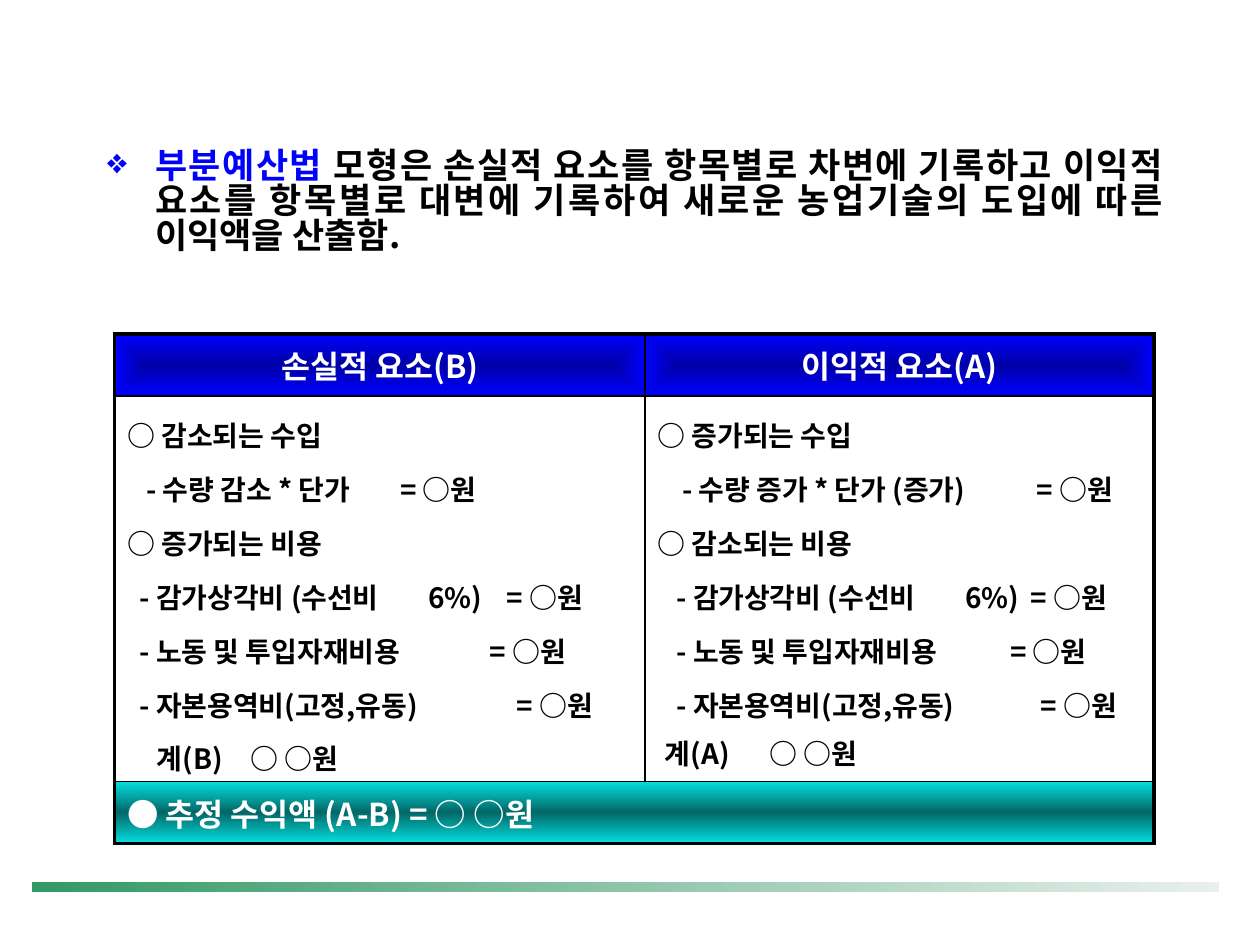
from lxml import etree
from pptx import Presentation
from pptx.dml.color import RGBColor
from pptx.enum.shapes import MSO_SHAPE
from pptx.enum.text import MSO_ANCHOR, PP_ALIGN
from pptx.oxml import parse_xml
from pptx.oxml.ns import qn
from pptx.util import Cm, Pt

RECTANGLE = MSO_SHAPE.RECTANGLE
MIDDLE, TOP = MSO_ANCHOR.MIDDLE, MSO_ANCHOR.TOP
LEFT, CENTER, JUSTIFY = PP_ALIGN.LEFT, PP_ALIGN.CENTER, PP_ALIGN.JUSTIFY
DRAWING = 'xmlns:a="http://schemas.openxmlformats.org/drawingml/2006/main"'
FONT = "Noto Sans CJK KR"
COLORS = {
    "black": "000000", "white": "FFFFFF", "blue": "0000FF", "navy": "0000A8",
    "cyan": "04E0E0", "teal": "036666", "green": "339966", "mist": "E9F0EC",
}


def set_font(font, size, color, bold=True):
    font.size, font.bold, font.name = Pt(size), bold, FONT
    font.color.rgb = RGBColor.from_string(COLORS[color])
    etree.SubElement(font._element, qn("a:ea"), typeface=FONT)


def fill_gradient(cell, names, direction):
    step = 100000 // (len(names) - 1)
    stops = "".join(
        f'<a:gs pos="{i * step}"><a:srgbClr val="{COLORS[name]}"/></a:gs>'
        for i, name in enumerate(names))
    cell._tc.get_or_add_tcPr().append(parse_xml(
        f"<a:gradFill {DRAWING}><a:gsLst>{stops}</a:gsLst>{direction}</a:gradFill>"))


deck = Presentation()
deck.slide_width, deck.slide_height = Cm(25.4), Cm(19.05)
page = deck.slides.add_slide(deck.slide_layouts[6])

# Footer bar
bar = page.shapes.add_shape(RECTANGLE, Cm(0.64), Cm(17.78), Cm(23.93), Cm(0.2))
bar.shadow.inherit = False
bar.line.fill.background()
bar.fill.gradient()
bar.fill.gradient_angle = 0
for stop, name in zip(bar.fill.gradient_stops, ("green", "mist")):
    stop.color.rgb = RGBColor.from_string(COLORS[name])

# Introduction
box = page.shapes.add_textbox(Cm(1.91), Cm(2.92), Cm(21.79), Cm(2.97))
box.text_frame.word_wrap = True
para = box.text_frame.paragraphs[0]
para.alignment, para.line_spacing = JUSTIFY, 0.83
properties = para._p.get_or_add_pPr()
properties.set("marL", str(Cm(0.97)))
properties.set("indent", str(-Cm(0.97)))
properties.append(parse_xml(
    f'<a:buClr {DRAWING}><a:srgbClr val="{COLORS["blue"]}"/></a:buClr>'))
etree.SubElement(properties, qn("a:buChar"), char="❖")
for text, color in (
    ("부분예산법", "blue"),
    (" 모형은 손실적 요소를 항목별로 차변에 기록하고 이익적 요소를 항목별로 "
     "대변에 기록하여 새로운 농업기술의 도입에 따른 이익액을 산출함.", "black"),
):
    span = para.add_run()
    span.text = text
    set_font(span.font, 20, color)

# Table grid
table = page.shapes.add_table(
    3, 2, Cm(2.31), Cm(6.73), Cm(20.95), Cm(10.27)).table
table.first_row = table.horz_banding = False
for column, width in zip(table.columns, (10.69, 10.26)):
    column.width = Cm(width)
for row, height in zip(table.rows, (1.25, 7.77, 1.25)):
    row.height = Cm(height)
table.cell(2, 0).merge(table.cell(2, 1))

# Thick outer frame, thin inner lines
for row in range(3):
    for column in range(2):
        cell = table.cell(row, column)
        cell.vertical_anchor = TOP if row == 1 else MIDDLE
        outer = {"L": column == 0, "R": column == 1 or row == 2,
                 "T": row == 0, "B": row == 2}
        for side, thick in outer.items():
            cell._tc.get_or_add_tcPr().append(parse_xml(
                f'<a:ln{side} {DRAWING} w="{Pt(2.25 if thick else 1)}"><a:solidFill>'
                f'<a:srgbClr val="{COLORS["black"]}"/></a:solidFill></a:ln{side}>'))

# Column headings
CENTERED = ('<a:path path="shape"><a:fillToRect l="50000" t="50000" '
            'r="50000" b="50000"/></a:path>')
for column, heading in enumerate(("손실적 요소(B)", "이익적 요소(A)")):
    cell = table.cell(0, column)
    fill_gradient(cell, ("navy", "blue"), CENTERED)
    para = cell.text_frame.paragraphs[0]
    para.text, para.alignment = heading, CENTER
    set_font(para.font, 18, "white")

# Loss and benefit items: text, tab stops in cm
items = (
    (("○ 감소되는 수입", ()),
     ("\t- 수량 감소 * 단가\t= ○원", (0.38, 5.5)),
     ("○ 증가되는 비용", ()),
     ("\t- 감가상각비 (수선비\t6%)\t= ○원", (0.25, 6.07, 7.65)),
     ("\t- 노동 및 투입자재비용\t= ○원", (0.25, 7.3)),
     ("\t- 자본용역비(고정,유동)\t= ○원", (0.25, 7.85)),
     ("\t계(B)\t○ ○원", (0.6, 2.49))),
    (("○ 증가되는 수입", ()),
     ("\t- 수량 증가 * 단가 (증가)\t= ○원", (0.5, 7.65)),
     ("○ 감소되는 비용", ()),
     ("\t- 감가상각비 (수선비\t6%)\t= ○원", (0.38, 6.2, 7.52)),
     ("\t- 노동 및 투입자재비용\t= ○원", (0.38, 7.11)),
     ("\t- 자본용역비(고정,유동)\t= ○원", (0.38, 7.72)),
     ("\t계(A)\t○ ○원", (0.15, 2.26))),
)
for column, lines in enumerate(items):
    cell = table.cell(1, column)
    cell.fill.background()
    cell.margin_top = Cm(0.2)
    frame = cell.text_frame
    for i, (text, stops) in enumerate(lines):
        para = frame.add_paragraph() if i else frame.paragraphs[0]
        para.text, para.alignment, para.line_spacing = text, LEFT, 1.2
        tight = i == 0 or (column == 1 and i == len(lines) - 1)
        para.space_before = Pt(0 if tight else 3.2)
        if stops:
            tabs = etree.SubElement(para._p.get_or_add_pPr(), qn("a:tabLst"))
            for position in stops:
                etree.SubElement(tabs, qn("a:tab"), pos=str(Cm(position)), algn="l")
        set_font(para.font, 16, "black")

# Estimated profit
cell = table.cell(2, 0)
fill_gradient(cell, ("cyan", "teal", "cyan"), '<a:lin ang="5400000" scaled="0"/>')
para = cell.text_frame.paragraphs[0]
for text, bold in (("● ", False), ("추정 수익액 (A-B) = ○ ○원", True)):
    span = para.add_run()
    span.text = text
    set_font(span.font, 18, "white", bold)

deck.save("out.pptx")
